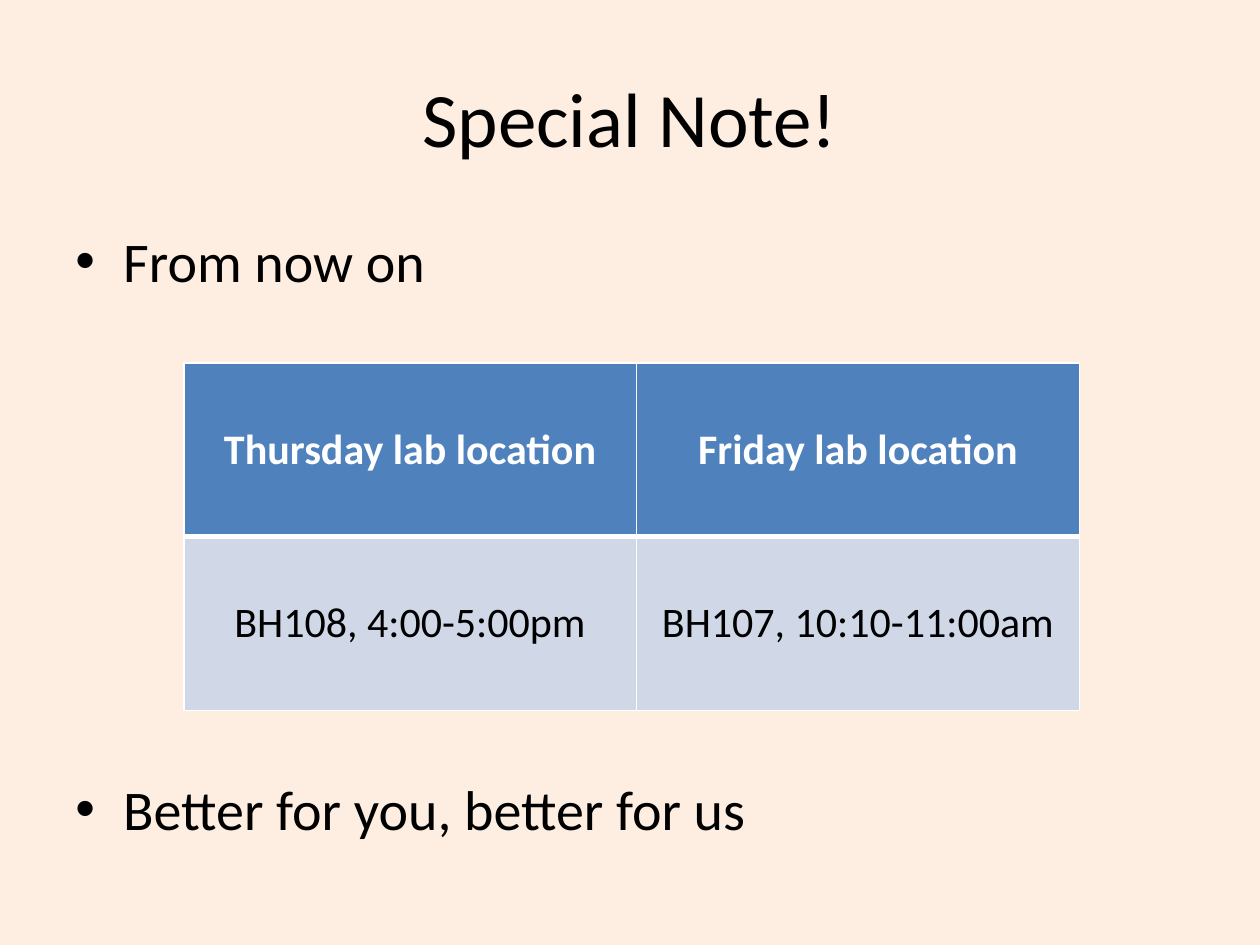
from lxml import etree
from pptx import Presentation
from pptx import util as u
from pptx.dml.color import RGBColor
from pptx.enum import text
from pptx.oxml import ns

WIDTH, HEIGHT = u.Inches(10), u.Inches(7.5)
FONT = "Calibri"

BACKGROUND = RGBColor(0xFE, 0xEE, 0xE1)
BLACK = RGBColor(0, 0, 0)
WHITE = RGBColor(0xFF, 0xFF, 0xFF)
HEADER_BLUE = RGBColor(0x4F, 0x81, 0xBD)
ROW_BLUE = RGBColor(0xD0, 0xD8, 0xE8)

MARGIN = 0.05  # share of the slide's width
BULLET_INDENT = u.Inches(0.38)
COLUMN_WIDTHS = (3.59, 3.52)
ROW_HEIGHT = 1.38

LAB_ROWS = (
    ("Thursday lab location", "Friday lab location"),
    ("BH108, 4:00-5:00pm", "BH107, 10:10-11:00am"),
)
ROW_FORMATS = (
    {"fill": HEADER_BLUE, "font": {"size": u.Pt(24), "bold": True}, "color": WHITE,
     "borders": {"L": 1, "R": 1, "T": 1, "B": 3}},
    {"fill": ROW_BLUE, "font": {"size": u.Pt(24), "bold": False}, "color": BLACK,
     "borders": {"L": 1, "R": 1, "T": 3, "B": 1}},
)


def write(paragraph, words, color, **font_format):
    """Put one formatted run in a paragraph."""
    run = paragraph.add_run()
    run.text = words
    run.font.color.rgb = color
    for name, value in {"name": FONT, **font_format}.items():
        setattr(run.font, name, value)


def place(shape, left, top, width, height):
    """Place a shape by shares of the slide's size."""
    box = {"left": left * WIDTH, "top": top * HEIGHT,
           "width": width * WIDTH, "height": height * HEIGHT}
    for name, value in box.items():
        setattr(shape, name, int(value))


def add_title(slide, words):
    title = slide.shapes.title
    place(title, MARGIN, 0.04, 1 - 2 * MARGIN, 1 / 6)
    title.text_frame.vertical_anchor = text.MSO_ANCHOR.MIDDLE
    paragraph = title.text_frame.paragraphs[0]
    paragraph.alignment = text.PP_ALIGN.CENTER
    write(paragraph, words, BLACK, size=u.Pt(44))


def add_bullets(slide, lines, gap):
    """Bulleted lines, with a gap that leaves room for the table."""
    shape = slide.shapes.add_textbox(0, 0, WIDTH, HEIGHT)
    place(shape, MARGIN, 0.233, 1 - 2 * MARGIN, 0.725)
    frame = shape.text_frame
    frame.word_wrap = True
    for index, line in enumerate(lines):
        paragraph = frame.add_paragraph() if index else frame.paragraphs[0]
        paragraph.space_before = gap if index else u.Pt(0)
        properties = paragraph._p.get_or_add_pPr()
        properties.set("marL", str(BULLET_INDENT))
        properties.set("indent", str(-BULLET_INDENT))
        etree.SubElement(properties, ns.qn("a:buFont"), typeface="Arial")
        etree.SubElement(properties, ns.qn("a:buChar"), char="•")
        write(paragraph, line, BLACK, size=u.Pt(32))


def set_borders(cell, widths):
    properties = cell._tc.get_or_add_tcPr()
    for side, width in widths.items():
        line = etree.SubElement(properties, ns.qn(f"a:ln{side}"), w=str(u.Pt(width)))
        fill = etree.SubElement(line, ns.qn("a:solidFill"))
        etree.SubElement(fill, ns.qn("a:srgbClr"), val=str(WHITE))


def format_cell(cell, words, style):
    set_borders(cell, style["borders"])
    cell.fill.solid()
    cell.fill.fore_color.rgb = style["fill"]
    cell.vertical_anchor = text.MSO_ANCHOR.MIDDLE
    paragraph = cell.text_frame.paragraphs[0]
    paragraph.alignment = text.PP_ALIGN.CENTER
    write(paragraph, words, style["color"], **style["font"])


def add_lab_table(slide):
    frame = slide.shapes.add_table(
        len(LAB_ROWS), len(COLUMN_WIDTHS), u.Inches(1.46), u.Inches(2.88),
        u.Inches(sum(COLUMN_WIDTHS)), u.Inches(ROW_HEIGHT * len(LAB_ROWS)))
    table = frame.table
    for column, width in zip(table.columns, COLUMN_WIDTHS):
        column.width = u.Inches(width)
    for row, entries, style in zip(table.rows, LAB_ROWS, ROW_FORMATS):
        row.height = u.Inches(ROW_HEIGHT)
        for cell, words in zip(row.cells, entries):
            format_cell(cell, words, style)


def main():
    presentation = Presentation()
    presentation.slide_width, presentation.slide_height = WIDTH, HEIGHT
    slide = presentation.slides.add_slide(presentation.slide_layouts[5])

    # Background
    slide.background.fill.solid()
    slide.background.fill.fore_color.rgb = BACKGROUND

    # Title, notes and lab locations
    add_title(slide, "Special Note!")
    add_bullets(slide, ("From now on", "Better for you, better for us"), u.Pt(274.5))
    add_lab_table(slide)

    presentation.save("out.pptx")


if __name__ == "__main__":
    main()
